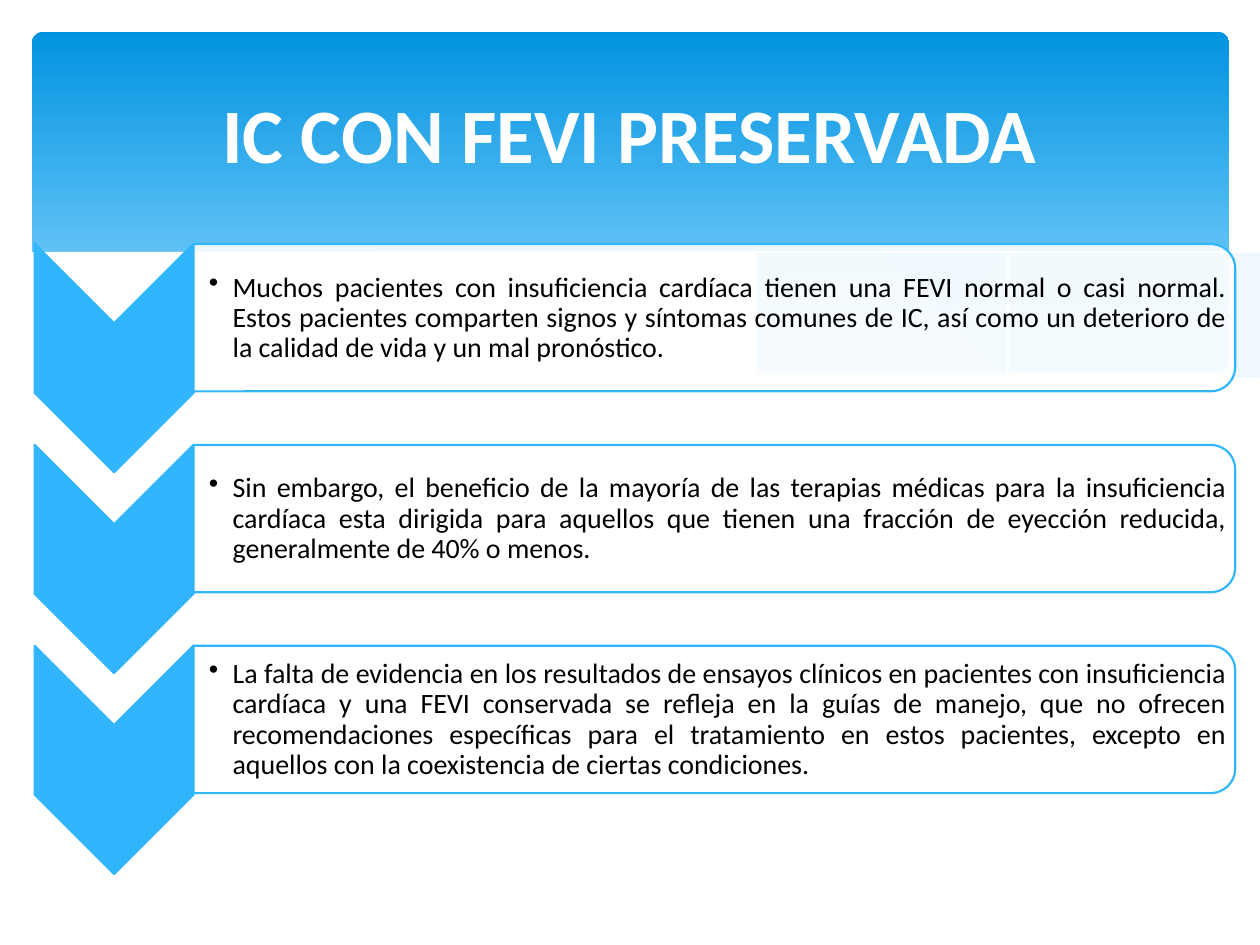
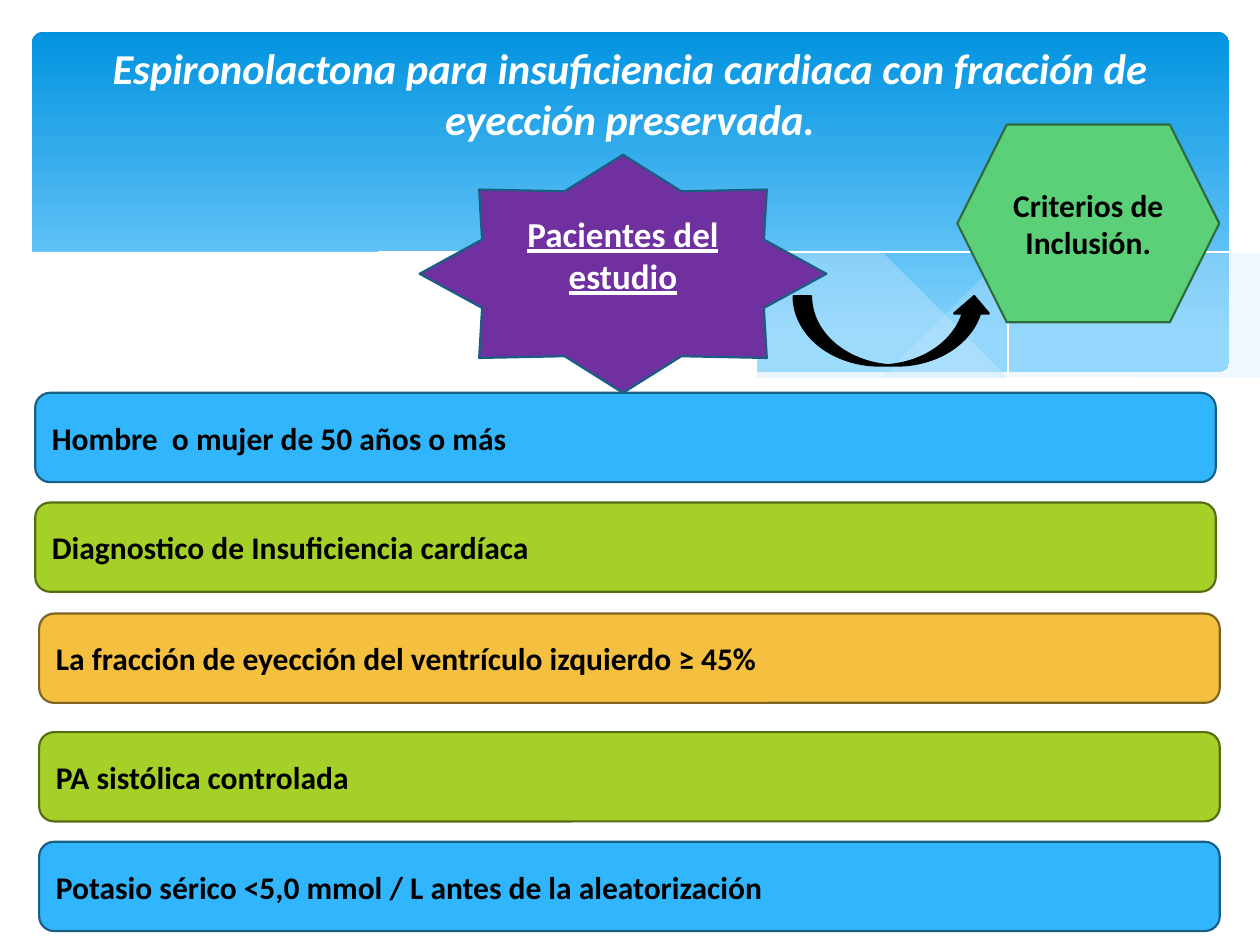
from pptx import Presentation
from pptx import util as u
from pptx.dml.color import RGBColor
from pptx.enum import shapes, text
from pptx.oxml.ns import qn
from lxml import etree

COLORS = {
    "white": "FFFFFF", "black": "000000", "band_top": "0293E0", "band_bottom": "83D3FE",
    "mist": "C6E7FC", "blue": "31B6FD", "blue_edge": "195F84",
    "lime": "A5D028", "lime_edge": "566D15", "amber": "F5C040", "amber_edge": "806421",
    "green": "5BD078", "green_edge": "2F6D3F", "purple": "7030A0",
}
FONT = "Calibri"
KINDS = shapes.MSO_SHAPE
LEFT, CENTER, JUSTIFY = text.PP_ALIGN.LEFT, text.PP_ALIGN.CENTER, text.PP_ALIGN.JUSTIFY

# Wave curves run through these points, counted in WAVE_UNIT
WAVE_UNIT = u.Cm(2.54)
RIGHT_MIST = [
    [(9.76, 2), (9.35, 2.07), (8.61, 2.23), (7.53, 2.48), (6.61, 2.65)],
    [(6.61, 2.65), (7.32, 2.74), (8.14, 2.78), (8.81, 2.73), (9.35, 2.62), (9.76, 2.47)],
]
MIDDLE_MIST = [
    [(8.93, 2.73), (8.07, 2.6), (7.06, 2.4), (6.29, 2.22), (5.41, 2.03), (4.65, 1.91),
     (3.8, 1.85), (3.28, 1.87), (2.86, 1.91)],
    [(2.86, 1.91), (3.62, 2.03), (4.49, 2.22), (5.3, 2.4), (6.18, 2.58), (6.95, 2.7),
     (7.61, 2.77), (8.28, 2.78), (8.93, 2.73)],
]
LONG_LINE = [[(3.09, 1.95), (3.53, 1.89), (4.16, 1.87), (4.89, 1.9), (5.82, 2),
              (6.65, 2.13), (7.6, 2.33), (8.31, 2.51), (9.07, 2.72)]]
RISING_LINE = [[(6.13, 2.57), (6.95, 2.35), (7.76, 2.16), (8.66, 1.99), (9.24, 1.9),
                (9.75, 1.85)]]
WHITE_WAVE = [
    [(9.77, 2.46), (9.3, 2.62), (8.75, 2.73), (8.09, 2.77), (7.26, 2.72), (6.48, 2.62),
     (5.55, 2.45), (4.47, 2.2), (3.65, 2.02), (2.92, 1.9), (2.3, 1.85), (1.77, 1.84),
     (1.19, 1.87), (0.76, 1.95), (0.46, 2.03), (0.23, 2.13)],
    [(0.23, 3.29), (9.77, 3.29)],
]

PRESERVED_POINTS = [
    "Muchos pacientes con insuficiencia cardíaca tienen una FEVI normal o casi normal. "
    "Estos pacientes comparten signos y síntomas comunes de IC, así como un deterioro "
    "de la calidad de vida y un mal pronóstico.",
    "Sin embargo, el beneficio de la mayoría de las terapias médicas para la "
    "insuficiencia cardíaca esta dirigida para aquellos que tienen una fracción de "
    "eyección reducida, generalmente de 40% o menos.",
    "La falta de evidencia en los resultados de ensayos clínicos en pacientes con "
    "insuficiencia cardíaca y una FEVI conservada se refleja en la guías de manejo, que "
    "no ofrecen recomendaciones específicas para el tratamiento en estos pacientes, "
    "excepto en aquellos con la coexistencia de ciertas condiciones.",
]
CRITERIA = [  # left, top, colour, wording
    (0.71, 7.92, "blue", "Hombre  o mujer de 50 años o más"),
    (0.71, 10.13, "lime", "Diagnostico de Insuficiencia cardíaca"),
    (0.79, 12.37, "amber", "La fracción de eyección del ventrículo izquierdo ≥ 45%"),
    (0.79, 14.76, "lime", "PA sistólica controlada"),
    (0.79, 16.97, "blue", "Potasio sérico <5,0 mmol / L antes de la aleatorización"),
]


def rgb(name):
    return RGBColor.from_string(COLORS[name])


def paint(shape, fill=None, line=None, width=1.25, opacity=None):
    """Set fill and outline; None leaves either one out."""
    shape.shadow.inherit = False
    if fill:
        shape.fill.solid()
        shape.fill.fore_color.rgb = rgb(fill)
        if opacity:
            color = shape.element.spPr.find(qn("a:solidFill"))[0]
            etree.SubElement(color, qn("a:alpha")).set("val", str(opacity * 1000))
    else:
        shape.fill.background()
    if line:
        shape.line.color.rgb = rgb(line)
        shape.line.width = u.Pt(width)
    else:
        shape.line.fill.background()


def write(shape, wording, size, color="black", align=LEFT, bold=True, **font_options):
    frame = shape.text_frame
    frame.word_wrap = True
    frame.vertical_anchor = text.MSO_ANCHOR.MIDDLE
    frame.text = wording
    paragraph = frame.paragraphs[0]
    paragraph.alignment = align
    font = paragraph.runs[0].font
    font.name, font.size, font.bold = FONT, u.Pt(size), bold
    font.color.rgb = rgb(color)
    for option, value in font_options.items():
        setattr(font, option, value)
    return paragraph


def add_figure(slide, kind, box, fill, line, opacity=None, turned=False):
    """Add a preset shape that fills box (cm); turned rotates it by a quarter."""
    left, top, width, height = box
    if turned:
        left, top = left + (width - height) / 2, top + (height - width) / 2
        width, height = height, width
    shape = slide.shapes.add_shape(kind, u.Cm(left), u.Cm(top), u.Cm(width), u.Cm(height))
    shape.rotation = 90 if turned else 0
    paint(shape, fill, line, opacity=opacity)
    return shape


def smooth(points, steps=5):
    """Return points of a Catmull-Rom curve through the given points."""
    if len(points) < 3:
        return points
    padded = [points[0], *points, points[-1]]
    curve = [points[0]]
    for a, b, c, d in zip(padded, padded[1:], padded[2:], padded[3:]):
        for step in range(1, steps + 1):
            t = step / steps
            curve.append(tuple(
                b[i] + t / 2 * (c[i] - a[i]
                                + t * (2 * a[i] - 5 * b[i] + 4 * c[i] - d[i])
                                + t * t * (3 * b[i] - a[i] - 3 * c[i] + d[i]))
                for i in (0, 1)))
    return curve


def add_wave(slide, segments, fill=None, line=None, opacity=None):
    points = [point for segment in segments for point in smooth(segment)]
    builder = slide.shapes.build_freeform(*points[0], scale=WAVE_UNIT)
    builder.add_line_segments(points[1:], close=fill is not None)
    wave = builder.convert_to_shape()
    paint(wave, fill, line, width=0, opacity=opacity)
    return wave


def add_band(slide):
    band = add_figure(slide, KINDS.ROUNDED_RECTANGLE, (0.64, 0.64, 24.14, 6.86), "band_top", None)
    band.adjustments[0] = 0.034
    band.fill.gradient()
    band.fill.gradient_angle = 270
    for stop, color, position in zip(band.fill.gradient_stops,
                                     ("band_top", "band_bottom"), (0, 0.9)):
        stop.color.rgb = rgb(color)
        stop.position = position
    return band


def move_backdrop_to_layout(slide):
    """Draw the band and waves once and hand them to the slide's layout."""
    backdrop = [
        add_band(slide),
        add_wave(slide, RIGHT_MIST, "mist", opacity=29),
        add_wave(slide, MIDDLE_MIST, "mist", opacity=40),
        add_wave(slide, LONG_LINE, line="white"),
        add_wave(slide, RISING_LINE, line="white"),
        add_wave(slide, WHITE_WAVE, "white"),
    ]
    layout_tree = slide.slide_layout.shapes.element
    for position, shape in enumerate(backdrop, start=2):
        layout_tree.insert(position, shape.element)


def set_title(slide, wording, size, top=0.94, **font_options):
    title = slide.shapes.title
    title.left, title.top, title.width, title.height = map(u.Cm, (1.27, top, 22.86, 3.48))
    write(title, wording, size, "white", CENTER, **font_options)
    return title


def add_chevron_point(slide, top, wording):
    add_figure(slide, KINDS.CHEVRON, (0.7, top, 3.2, 4.6), "blue", "blue", turned=True)
    add_figure(slide, KINDS.ROUND_2_SAME_RECTANGLE, (3.9, top, 21, 2.97), "white", "blue",
               opacity=90, turned=True)
    box = slide.shapes.add_textbox(u.Cm(3.91), u.Cm(top + 0.15), u.Cm(20.85), u.Cm(2.69))
    paragraph = write(box, wording, 16, align=JUSTIFY, bold=False)
    frame = box.text_frame
    frame.margin_left = u.Cm(0.3)
    frame.margin_top = frame.margin_right = frame.margin_bottom = u.Cm(0.03)
    paragraph.line_spacing = 0.9
    properties = paragraph._p.get_or_add_pPr()
    properties.set("marL", str(u.Cm(0.48)))
    properties.set("indent", str(-u.Cm(0.48)))
    etree.SubElement(properties, qn("a:buChar")).set("char", "•")


def build_preserved_slide(slide):
    set_title(slide, "IC CON FEVI PRESERVADA", 44)
    for row, wording in enumerate(PRESERVED_POINTS):
        add_chevron_point(slide, 4.92 + 4.05 * row, wording)


def build_criteria_slide(slide):
    title = set_title(slide, "Espironolactona para insuficiencia cardiaca con fracción de "
                      "eyección preservada.", 24.3, top=0.85, italic=True)
    title.text_frame.vertical_anchor = text.MSO_ANCHOR.TOP
    title.text_frame.margin_top = 0

    star = add_figure(slide, KINDS.STAR_8_POINT, (8.46, 3.12, 8.2, 4.8), "purple", "blue_edge")
    write(star, "Pacientes del estudio", 20, "white", CENTER, underline=True)
    star.text_frame.margin_bottom = u.Cm(0.9)

    for left, top, color, wording in CRITERIA:
        bar = add_figure(slide, KINDS.ROUNDED_RECTANGLE, (left, top, 23.8, 1.8),
                         color, color + "_edge")
        write(bar, wording, 18)

    hexagon = add_figure(slide, KINDS.HEXAGON, (19.3, 2.51, 5.28, 3.99), "green", "green_edge")
    write(hexagon, "Criterios de Inclusión.", 18, align=CENTER)
    add_figure(slide, KINDS.CURVED_UP_ARROW, (16, 5.97, 3.99, 1.4), "black", "black")


def main():
    presentation = Presentation()
    presentation.slide_width, presentation.slide_height = u.Cm(25.4), u.Cm(19.05)
    title_only = presentation.slide_layouts[5]
    preserved, criteria = (presentation.slides.add_slide(title_only) for _ in range(2))
    move_backdrop_to_layout(preserved)
    build_preserved_slide(preserved)
    build_criteria_slide(criteria)
    presentation.save("out.pptx")


if __name__ == "__main__":
    main()
